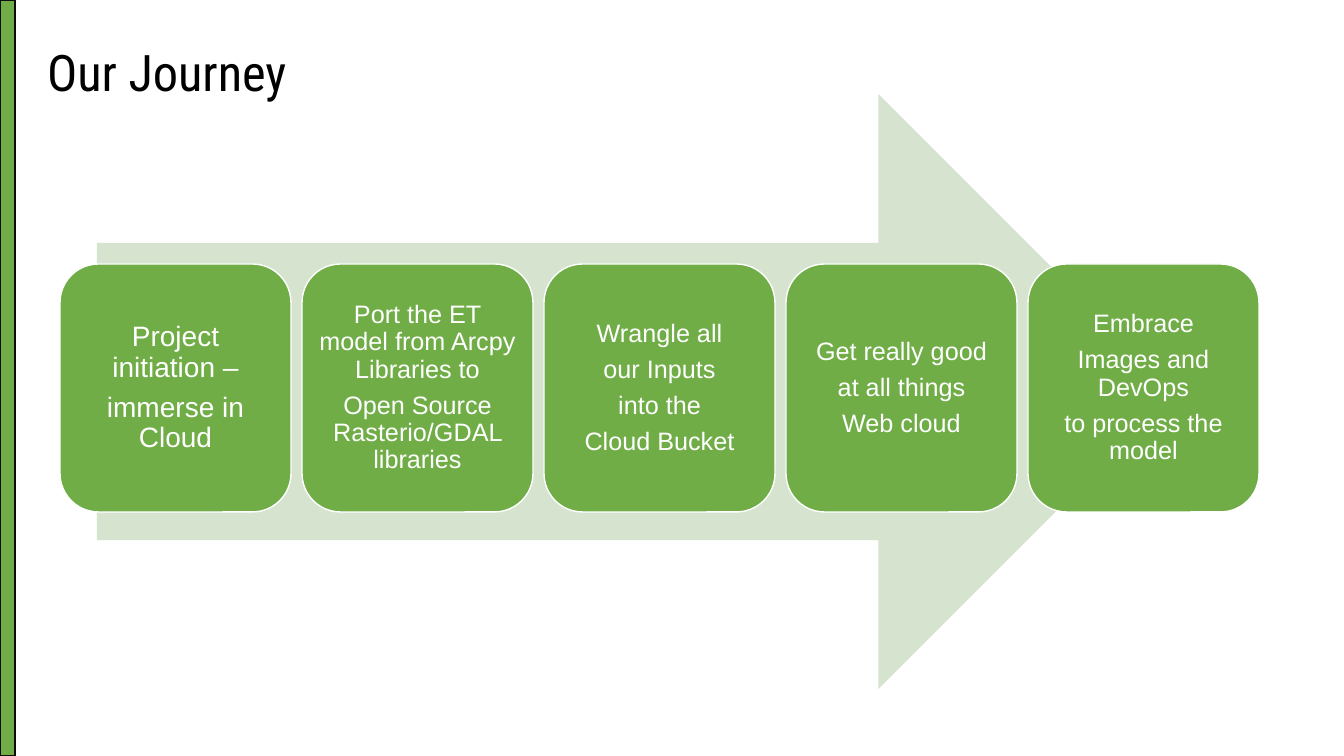
from pptx import Presentation
from pptx import util as u
from pptx.dml.color import RGBColor
from pptx.enum import shapes, text

TITLE = "Our Journey"
# (text size in points, paragraphs)
STEPS = [
    (20, ["Project initiation –", "immerse in Cloud"]),
    (18, ["Port the ET model from Arcpy Libraries to",
          "Open Source Rasterio/GDAL libraries"]),
    (18, ["Wrangle all", "our Inputs", "into the", "Cloud Bucket"]),
    (18, ["Get really good", "at all things", "Web cloud"]),
    (18, ["Embrace", "Images and DevOps", "to process the model"]),
]
COLORS = {"green": "70AD47", "pale": "D5E3CF", "edge": "0D0D0D",
          "white": "FFFFFF", "black": "000000"}

PX = 914400 / 100.8
SLIDE_W, SLIDE_H = 1344, 756
TITLE_BOX = (37, 38, 1215, 74)
BAR_BOX = (0, 0, 15, SLIDE_H)
ARROW_BOX = (97, 94, 1079, 595)
STEP_X, STEP_Y, STEP_W, STEP_H, STEP_GAP = 60, 264, 231, 248, 11
STEP_INSET = 6


def px(n):
    return u.Emu(round(n * PX))


def rgb(name):
    return RGBColor.from_string(COLORS[name])


def add_block(s, kind, box, fill, line=None):
    sp = s.shapes.add_shape(kind, *map(px, box))
    sp.shadow.inherit = False
    sp.fill.solid()
    sp.fill.fore_color.rgb = rgb(fill)
    if line:
        sp.line.color.rgb = rgb(line)
        sp.line.width = u.Pt(1)
    else:
        sp.line.fill.background()
    return sp


def write(tf, lines, font, size, color, align, space_after=0):
    tf.word_wrap = True
    tf.auto_size = text.MSO_AUTO_SIZE.NONE
    tf.vertical_anchor = text.MSO_ANCHOR.MIDDLE
    for i, line in enumerate(lines):
        p = tf.paragraphs[0] if i == 0 else tf.add_paragraph()
        layout = {"alignment": align, "line_spacing": 0.9,
                  "space_before": u.Pt(0), "space_after": u.Pt(space_after)}
        for key, value in layout.items():
            setattr(p, key, value)
        r = p.add_run()
        r.text = line
        r.font.name, r.font.size = font, u.Pt(size)
        r.font.color.rgb = rgb(color)


def main():
    prs = Presentation()
    prs.slide_width, prs.slide_height = px(SLIDE_W), px(SLIDE_H)
    s = prs.slides.add_slide(prs.slide_layouts[5])

    title = s.shapes.title
    for key, value in zip(("left", "top", "width", "height"), TITLE_BOX):
        setattr(title, key, px(value))
    write(title.text_frame, [TITLE], "Roboto Condensed", 36, "black",
          text.PP_ALIGN.LEFT)

    kinds = shapes.MSO_SHAPE
    add_block(s, kinds.RECTANGLE, BAR_BOX, "green", "edge")
    add_block(s, kinds.RIGHT_ARROW, ARROW_BOX, "pale")

    for i, (size, lines) in enumerate(STEPS):
        x = STEP_X + i * (STEP_W + STEP_GAP)
        sp = add_block(s, kinds.ROUNDED_RECTANGLE,
                       (x, STEP_Y, STEP_W, STEP_H), "green", "white")
        tf = sp.text_frame
        for side in ("left", "top", "right", "bottom"):
            setattr(tf, f"margin_{side}", px(STEP_INSET))
        write(tf, lines, "Arial", size, "white", text.PP_ALIGN.CENTER,
              space_after=0.35 * size)

    prs.save("out.pptx")


if __name__ == "__main__":
    main()
